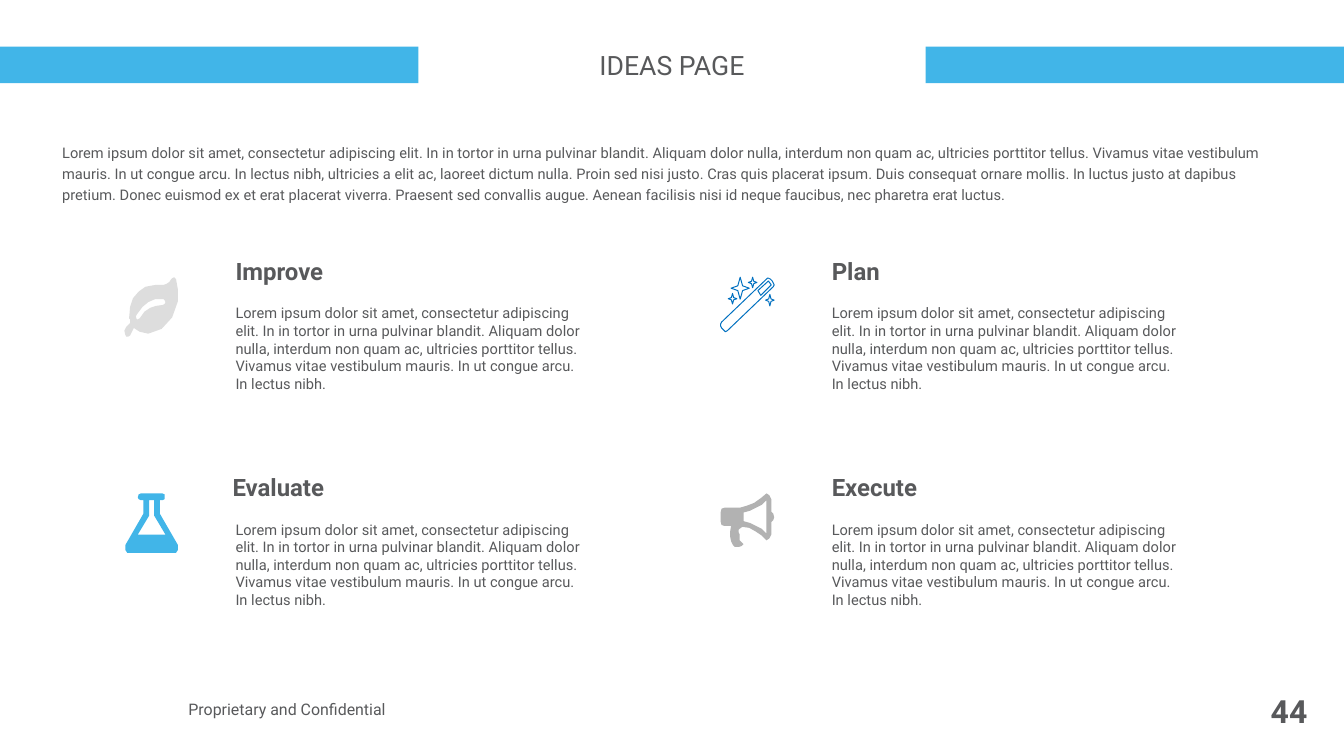
from pptx import Presentation
from pptx.dml.color import RGBColor
from pptx.enum.shapes import MSO_SHAPE as Preset
from pptx.enum.text import MSO_ANCHOR as Anchor, MSO_AUTO_SIZE as Fit, PP_ALIGN as Align
from pptx.util import Cm, Pt

FONT = "Roboto"
COLORS = {
    "text": "58595B", "blue": "41B5E8", "white": "FFFFFF",
    "grey": "B2B2B2", "pale": "DDDDDD", "outline": "0070C0",
}
SLIDE_W, SLIDE_H = 35.66, 20.07
SUBSTEPS = 10  # freeform steps per icon unit
ICON_UNIT = Cm(0.0254)

INTRO = (
    "Lorem ipsum dolor sit amet, consectetur adipiscing elit. In in tortor in urna pulvinar "
    "blandit. Aliquam dolor nulla, interdum non quam ac, ultricies porttitor tellus. Vivamus "
    "vitae vestibulum mauris. In ut congue arcu. In lectus nibh, ultricies a elit ac, laoreet "
    "dictum nulla. Proin sed nisi justo. Cras quis placerat ipsum. Duis consequat ornare mollis. "
    "In luctus justo at dapibus pretium. Donec euismod ex et erat placerat viverra. Praesent sed "
    "convallis augue. Aenean facilisis nisi id neque faucibus, nec pharetra erat luctus."
)
IDEA_TEXT = INTRO.split(", ultricies a elit")[0] + "."


def star(x, y, rx, ry):
    """Return the outline of a four-pointed star around (x, y)."""
    ix, iy = rx * 0.26, ry * 0.22
    return [(x - rx, y), (x - ix, y - iy), (x, y - ry), (x + ix, y - iy),
            (x + rx, y), (x + ix, y + iy), (x, y + ry), (x - ix, y + iy)]


LEAF = [
    [(54, 2), (56, 13), (56, 25), (50, 42), (39, 54), (25, 59), (16, 57), (13, 55), (10, 53),
     (8, 57), (6, 61), (4, 62), (2, 62), (1, 60), (0, 56), (2, 52), (6, 48), (6, 44), (5, 43),
     (6, 31), (9, 22), (15, 15), (22, 10), (27, 9), (33, 8), (41, 8), (44, 7), (47, 5),
     (49, 2), (50, 1), (52, 0), (53, 1)],
    [(40, 29), (42, 28), (43, 26), (42, 24), (41, 23), (32, 23), (25, 26), (19, 31), (13, 39),
     (12, 41), (13, 44), (14, 44), (16, 43), (21, 36), (27, 32), (33, 30)],
]
WAND = [
    [(49, 1), (50, 1), (52, 2), (54, 4), (55, 6), (56, 8), (55, 10), (7, 56), (5, 57), (3, 55),
     (1, 53), (0, 51), (0, 49), (1, 47)],
    [(53, 8), (50, 4), (39, 14), (42, 19)],
    star(12.5, 22.5, 4.5, 5.5), star(20.5, 11.5, 9.5, 11.5),
    star(33.5, 5.5, 4.5, 5.5), star(51.5, 24, 4.5, 6),
]
FLASK = [
    [(56, 54), (56, 59), (54, 62), (51, 62), (5, 62), (3, 62), (1, 59), (1, 54), (20, 21),
     (20, 7), (17, 7), (15, 6), (14, 4), (15, 1), (17, 0), (40, 0), (42, 1), (42, 4), (42, 6),
     (40, 7), (37, 7), (37, 21)],
    [(14, 43), (43, 43), (31, 23), (31, 7), (26, 7), (26, 23)],
]
MEGAPHONE = [
    [(56, 25), (55, 28), (53, 30), (53, 43), (51, 47), (48, 49), (43, 44), (37, 40), (30, 36),
     (23, 35), (21, 36), (19, 38), (19, 41), (20, 43), (20, 49), (22, 51), (24, 53), (22, 55),
     (19, 56), (15, 56), (13, 54), (11, 50), (10, 45), (10, 40), (11, 34), (4, 34), (1, 33),
     (0, 29), (0, 20), (1, 16), (4, 15), (20, 15), (27, 13), (35, 10), (42, 5), (48, 0),
     (51, 2), (53, 6), (53, 19), (55, 21)],
    [(48, 7), (43, 12), (37, 15), (31, 18), (24, 20), (24, 29), (31, 31), (37, 34), (43, 37),
     (48, 42)],
]
# heading, heading width, heading shift, icon, fill, line
IDEAS = [
    ("Improve", 3.12, 0, LEAF, "pale", None),
    ("Plan", 2.06, 0, WAND, "white", "outline"),
    ("Evaluate", 3.25, -0.08, FLASK, "blue", None),
    ("Execute", 3.07, 0, MEGAPHONE, "grey", None),
]


def color(key):
    return RGBColor.from_string(COLORS[key])


def paint(shape, fill=None, line=None):
    shape.shadow.inherit = False
    if fill:
        shape.fill.solid()
        shape.fill.fore_color.rgb = color(fill)
    else:
        shape.fill.background()
    if line:
        shape.line.color.rgb = color(line)
        shape.line.width = Pt(0.75)
    else:
        shape.line.fill.background()


def write(shape, text, size=11, bold=False, align=Align.LEFT, anchor=Anchor.TOP,
          inset=(0.38, 0.2), wrap=True, fit=Fit.SHAPE_TO_FIT_TEXT, spacing=1.0):
    frame = shape.text_frame
    frame.word_wrap, frame.auto_size, frame.vertical_anchor = wrap, fit, anchor
    frame.margin_left = frame.margin_right = Cm(inset[0])
    frame.margin_top = frame.margin_bottom = Cm(inset[1])
    paragraph = frame.paragraphs[0]
    paragraph.alignment, paragraph.line_spacing = align, spacing
    run = paragraph.add_run()
    run.text = text
    run.font.name, run.font.size, run.font.bold = FONT, Pt(size), bold
    run.font.color.rgb = color("text")


def text_box(slide, box, text, **text_format):
    write(slide.shapes.add_textbox(*map(Cm, box)), text, **text_format)


def add_icon(slide, left, top, outlines, fill, line):
    """Draw closed outlines as one freeform; inner outlines become holes."""
    outlines = [[(x * SUBSTEPS, y * SUBSTEPS) for x, y in outline] for outline in outlines]
    builder = slide.shapes.build_freeform(*outlines[0][0], scale=ICON_UNIT / SUBSTEPS)
    builder.add_line_segments(outlines[0][1:])
    for outline in outlines[1:]:
        builder.move_to(*outline[0])
        builder.add_line_segments(outline[1:])
    paint(builder.convert_to_shape(Cm(left), Cm(top)), fill, line)


def add_header(slide, left, top, width, height):
    """Place the full-width band with the title across its middle."""
    band = slide.shapes.add_shape(Preset.RECTANGLE, *map(Cm, (left, top, width, height)))
    paint(band, "blue")
    title = slide.shapes.title
    title.element.addprevious(band.element)
    title_w, title_h = 13.46, 1.37
    title.left, title.top = Cm(left + (width - title_w) / 2), Cm(top + (height - title_h) / 2)
    title.width, title.height = Cm(title_w), Cm(title_h)
    title.fill.solid()
    title.fill.fore_color.rgb = color("white")
    write(title, "IDEAS PAGE", size=20, align=Align.CENTER, anchor=Anchor.MIDDLE,
          inset=(0.25, 0.25))


def add_idea(slide, left, top, idea):
    heading, heading_w, shift, outlines, fill, line = idea
    text_left = left + 2.57
    add_icon(slide, left, top + 0.76, outlines, fill, line)
    text_box(slide, (text_left + shift, top, heading_w, 1.14), heading,
             size=18, bold=True, wrap=False)
    text_box(slide, (text_left, top + 1.28, 9.96, 2.74), IDEA_TEXT)


def add_ideas(slide, left, top, column_step, row_step):
    for index, idea in enumerate(IDEAS):
        row, column = divmod(index, 2)
        add_idea(slide, left + column * column_step, top + row * row_step, idea)


def add_footer(slide, left, top, width, height):
    text_box(slide, (left + 4.9, top, 8.86, height), "Proprietary and Confidential", size=12,
             anchor=Anchor.MIDDLE, inset=(0.1, 0.1), fit=Fit.NONE)
    number_box = (left + width - 2.44, top + 0.33, 1.52, 1.04)
    number = slide.shapes.add_shape(Preset.ROUNDED_RECTANGLE, *map(Cm, number_box))
    paint(number)
    write(number, "44", size=24, bold=True, align=Align.RIGHT, anchor=Anchor.MIDDLE,
          inset=(0, 0), wrap=False, fit=Fit.NONE)


def main():
    deck = Presentation()
    deck.slide_width, deck.slide_height = Cm(SLIDE_W), Cm(SLIDE_H)
    slide = deck.slides.add_slide(deck.slide_layouts.get_by_name("Title Only"))
    add_header(slide, 0, 1.24, SLIDE_W, 0.97)
    text_box(slide, (1.27, 3.53, 32.97, 2.08), INTRO, spacing=1.2)
    add_ideas(slide, 3.3, 6.6, column_step=15.82, row_step=5.74)
    add_footer(slide, 0, 18.01, SLIDE_W, 1.65)
    deck.save("out.pptx")


if __name__ == "__main__":
    main()
